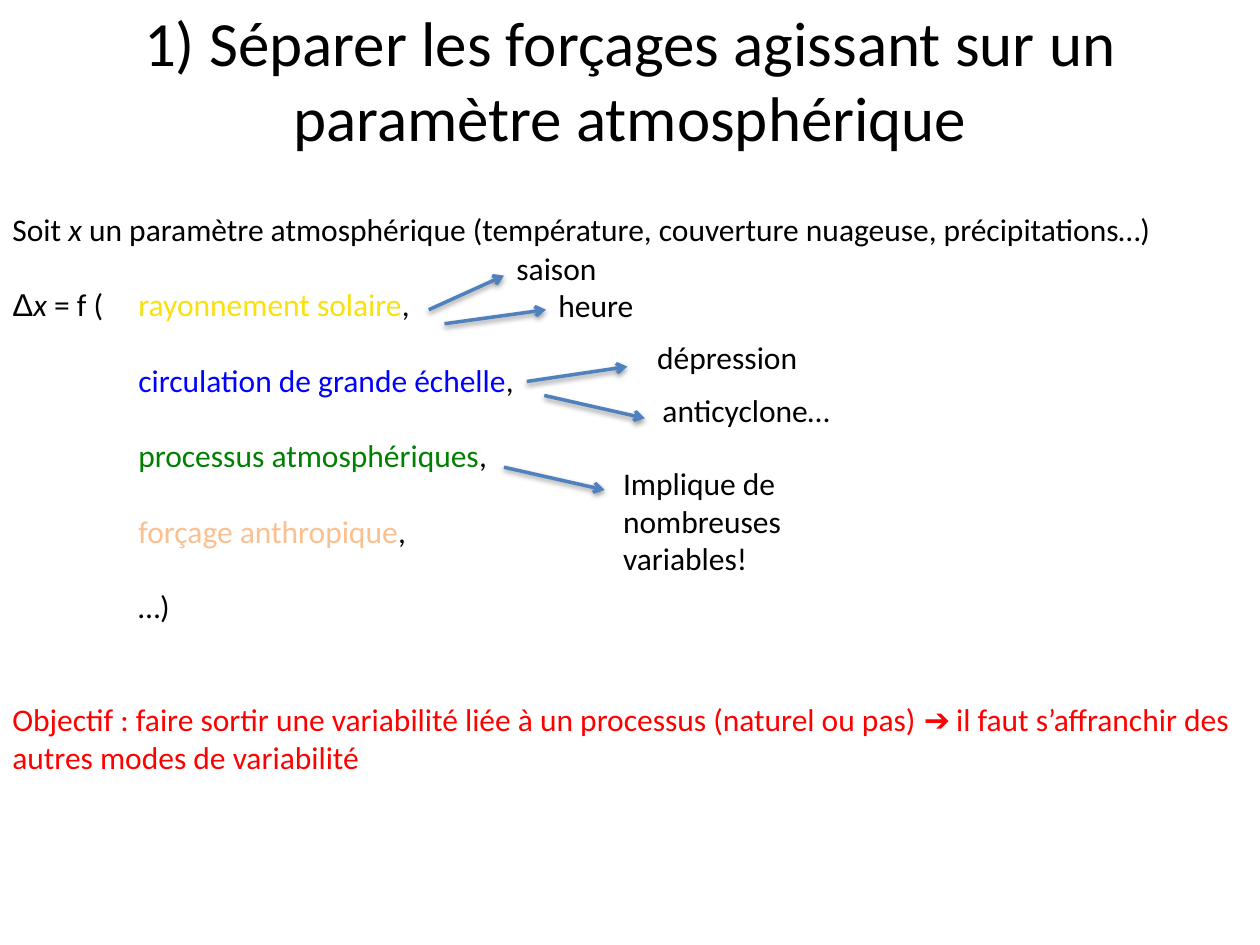
from lxml.etree import SubElement as Sub
from pptx import Presentation
from pptx.dml.color import RGBColor
from pptx.enum.shapes import MSO_CONNECTOR as Conn
from pptx.enum.text import MSO_ANCHOR as Anchor, PP_ALIGN as Align
from pptx.oxml.ns import qn
from pptx.util import Pt

BLACK = RGBColor(0, 0, 0)
YELLOW = RGBColor(0xF8, 0xE1, 0x0C)
BLUE = RGBColor(0, 0, 0xFF)
GREEN = RGBColor(0, 0x80, 0)
PEACH = RGBColor(0xFA, 0xC0, 0x90)
RED = RGBColor(0xFF, 0, 0)
STEEL = RGBColor(0x4F, 0x81, 0xBD)

# Content: a run is its text and the format that differs from plain
TITLE = "1) Séparer les forçages agissant sur un paramètre atmosphérique"
ITALIC = {"italic": True}
INTRO = [("Soit ", {}), ("x", ITALIC),
         (" un paramètre atmosphérique (température, couverture nuageuse, "
          "précipitations…)", {})]
START = [("Δ", {"name": "Arial"}), ("x", ITALIC), (" = f (\t", {})]
TERMS = [("rayonnement solaire", YELLOW),
         ("circulation de grande échelle", BLUE),
         ("processus atmosphériques", GREEN),
         ("forçage anthropique", PEACH)]
GOAL = ("Objectif : faire sortir une variabilité liée à un processus "
        "(naturel ou pas) ➔ il faut s’affranchir des autres modes de "
        "variabilité")

# Notes: text, left, top, height; arrows: start x, y, end x, y
NOTES = [("saison", 288, 139, 29),
         ("heure", 312, 160, 29),
         ("dépression", 368.5, 189.5, 29),
         ("anticyclone…", 371.5, 220, 29),
         ("Implique de nombreuses variables!", 349, 261.5, 73)]
ARROWS = [(245, 177, 288, 157.5),
          (254, 185, 312, 177),
          (301, 218, 358.5, 209.5),
          (311, 226, 368.5, 239),
          (288, 267, 345.5, 280)]
WIDE, HIGH, NOTE_W = 720, 540, 160.5
INDENT, GAP = 72, 21.5


def add_runs(para, runs, size=18):
    for text, diff in runs:
        run = para.add_run()
        run.text = text
        look = {"name": "Calibri", "size": Pt(size), "color": BLACK, **diff}
        run.font.color.rgb = look.pop("color")
        for key, val in look.items():
            setattr(run.font, key, val)


def add_box(slide, left, top, width, height, paras):
    box = slide.shapes.add_textbox(*map(Pt, (left, top, width, height)))
    frame = box.text_frame
    frame.word_wrap = True
    for i, runs in enumerate(paras):
        para = frame.add_paragraph() if i else frame.paragraphs[0]
        add_runs(para, runs)
    return frame


def add_arrow(slide, ends):
    arrow = slide.shapes.add_connector(Conn.STRAIGHT, *map(Pt, ends))
    arrow.line.color.rgb = STEEL
    arrow.line.width = Pt(2)
    Sub(arrow.line._ln, qn("a:tailEnd"), type="arrow")
    # Soft shadow straight below
    fx = Sub(arrow._element.spPr, qn("a:effectLst"))
    shade = Sub(fx, qn("a:outerShdw"), blurRad=str(Pt(3.1)),
                dist=str(Pt(1.6)), dir="5400000", rotWithShape="0")
    tint = Sub(shade, qn("a:srgbClr"), val="000000")
    Sub(tint, qn("a:alpha"), val="38000")


def main():
    deck = Presentation()
    deck.slide_width, deck.slide_height = Pt(WIDE), Pt(HIGH)
    slide = deck.slides.add_slide(deck.slide_layouts[5])

    # Title
    title = slide.shapes.title
    place = {"left": 0, "top": 0, "width": Pt(WIDE), "height": Pt(90)}
    for key, val in place.items():
        setattr(title, key, val)
    title.text_frame.vertical_anchor = Anchor.MIDDLE
    head = title.text_frame.paragraphs[0]
    head.alignment = Align.CENTER
    add_runs(head, [(TITLE, {})], 36)

    # Formula: the terms hang on one indent, the first after "Δx = f ("
    rows = [[(text, {"color": tone}), (",", {})] for text, tone in TERMS]
    rows[0] = START + rows[0]
    rows.append([("…)", {})])
    frame = add_box(slide, 0, 116.5, WIDE, 247, [INTRO] + rows)
    for i, para in enumerate(frame.paragraphs[1:]):
        para.space_before = Pt(GAP)
        props = para._p.get_or_add_pPr()
        props.set("marL", str(Pt(INDENT)))
        props.set("indent", str(Pt(0 if i else -INDENT)))

    # Goal
    add_box(slide, 0, 396.5, WIDE, 51, [[(GOAL, {"color": RED})]])

    # Arrows and their notes
    for ends in ARROWS:
        add_arrow(slide, ends)
    for text, left, top, height in NOTES:
        add_box(slide, left, top, NOTE_W, height, [[(text, {})]])

    deck.save("out.pptx")


if __name__ == "__main__":
    main()
